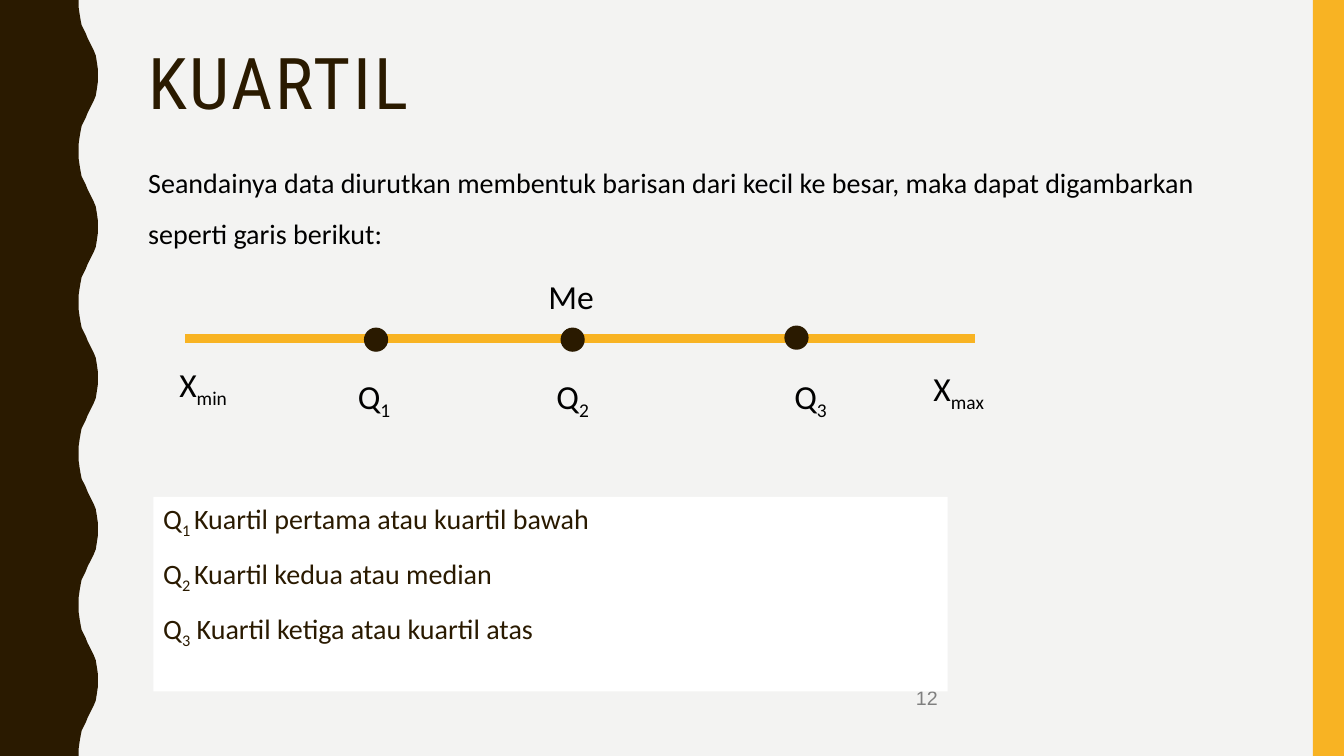
from pptx import Presentation
from pptx.dml.color import RGBColor
from pptx.enum.shapes import MSO_CONNECTOR, MSO_SHAPE
from pptx.enum.text import MSO_ANCHOR, MSO_AUTO_SIZE, PP_ALIGN
from pptx.oxml.ns import qn
from pptx.util import Emu, Pt
from lxml import etree

RECT, OVAL = MSO_SHAPE.RECTANGLE, MSO_SHAPE.OVAL
STRAIGHT = MSO_CONNECTOR.STRAIGHT
TOP, MIDDLE = MSO_ANCHOR.TOP, MSO_ANCHOR.MIDDLE
LEFT, RIGHT = PP_ALIGN.LEFT, PP_ALIGN.RIGHT
NO_FIT = MSO_AUTO_SIZE.NONE

C = {"paper": "F3F3F2", "brown": "2A1A00", "gold": "F8B323",
     "black": "000000", "grey": "7F7F7F", "white": "FFFFFF"}
SCALE = 9144  # EMU per px, 100 px to the inch
W, H = 1333, 750

# Right edge of one half wave, from trough to crest
HALF_WAVE = [(78, 0), (78, 7), (79, 14), (80, 20), (81, 25), (83, 29),
             (85, 33), (87, 38), (89, 42), (91, 46), (93, 50), (95, 55),
             (96, 61), (97, 68), (97, 75)]
WAVE = 150


def px(*values):
    return [Emu(v * SCALE) for v in values]


def rgb(name):
    return RGBColor.from_string(C[name])


def paint(s, color):
    s.shadow.inherit = False
    s.fill.solid()
    s.fill.fore_color.rgb = rgb(color)
    s.line.fill.background()


def style(r, size, color, font="Calibri"):
    r.font.size, r.font.name = Pt(size), font
    r.font.color.rgb = rgb(color)


def prepare(tf, anchor=TOP):
    tf.word_wrap, tf.auto_size = True, NO_FIT
    tf.vertical_anchor = anchor


def write(p, parts, size, color):
    """Add runs; every second part is a subscript."""
    for i, text in enumerate(parts):
        r = p.add_run()
        r.text = text
        style(r, size, color)
        if i % 2:
            r.font._element.set("baseline", "-25000")


def add_label(shapes, box, parts, size=24, color="black"):
    tf = shapes.add_textbox(*px(*box)).text_frame
    prepare(tf)
    write(tf.paragraphs[0], parts, size, color)


def add_frame(slide):
    slide.background.fill.solid()
    slide.background.fill.fore_color.rgb = rgb("paper")
    # Wavy left edge
    period = HALF_WAVE + [(x, WAVE - y) for x, y in HALF_WAVE[-2::-1]]
    edge = [(x, y + top) for top in range(0, H, WAVE) for x, y in period]
    builder = slide.shapes.build_freeform(0, 0, scale=SCALE)
    builder.add_line_segments(edge + [(0, H)], close=True)
    paint(builder.convert_to_shape(), "brown")
    # Gold right edge
    paint(slide.shapes.add_shape(RECT, *px(W - 31, 0, 31, H)), "gold")


def fill_placeholder(s, box, text, size, color, font, spacing):
    s.left, s.top, s.width, s.height = px(*box)
    tf = s.text_frame
    tf.text = text
    prepare(tf)
    p = tf.paragraphs[0]
    p.alignment, p.line_spacing = LEFT, spacing
    style(p.runs[0], size, color, font)
    return p


def add_text(slide, box):
    x, y, w, h = box
    p = fill_placeholder(slide.shapes.title, (x, y, w, 101), "KUARTIL",
                         51, "brown", "Roboto Condensed", 0.9)
    p.runs[0].font._element.set("spc", "200")
    p = fill_placeholder(
        slide.placeholders[1], (x, y + 101, w, h - 101),
        "Seandainya data diurutkan membentuk barisan dari kecil ke besar, "
        "maka dapat digambarkan seperti garis berikut:",
        20, "black", "Calibri", 1.5)
    p.space_before = Pt(7)
    pPr = p._p.get_or_add_pPr()
    pPr.set("marL", "0")
    pPr.set("indent", "0")
    etree.SubElement(pPr, qn("a:buNone"))


def add_page_number(slide, box):
    tf = slide.shapes.add_textbox(*px(*box)).text_frame
    prepare(tf, MIDDLE)
    tf.text = "12"
    p = tf.paragraphs[0]
    p.alignment = RIGHT
    style(p.runs[0], 14, "grey", "Arial")


def add_number_line(slide, box):
    x, y, w, h = box
    shapes = slide.shapes.add_group_shape().shapes
    # Axis
    axis_y = y + 67
    axis = shapes.add_connector(STRAIGHT, *px(x + 16, axis_y, x + 799, axis_y))
    axis.line.color.rgb, axis.line.width = rgb("gold"), Pt(6)
    etree.SubElement(axis._element.spPr, qn("a:effectLst"))
    # Quartile dots
    for dx, dy in ((193, 0), (388, 0), (610, -2)):
        dot = shapes.add_shape(OVAL, *px(x + dx, axis_y + dy - 11, 24, 24))
        paint(dot, "brown")
    # Labels
    for dx, dy, width, parts in (
            (0, 87, 118, ("X", "min")), (177, 99, 79, ("Q", "1")),
            (374, 99, 102, ("Q", "2")), (366, 0, 94, ("Me",)),
            (610, 99, 110, ("Q", "3")), (748, 91, 98, ("X", "max"))):
        add_label(shapes, (x + dx, y + dy, width, 50), parts)


def add_legend(slide, box):
    s = slide.shapes.add_shape(RECT, *px(*box))
    paint(s, "white")
    tf = s.text_frame
    prepare(tf)
    for i, parts in enumerate((
            ("Q", "1 ", "Kuartil pertama atau kuartil bawah"),
            ("Q", "2 ", "Kuartil kedua atau median"),
            ("Q", "3", " Kuartil ketiga atau kuartil atas"))):
        p = tf.add_paragraph() if i else tf.paragraphs[0]
        p.alignment = LEFT
        p.space_before = Pt(12 if i else 0)
        write(p, parts, 20, "brown")


def main():
    prs = Presentation()
    prs.slide_width, prs.slide_height = px(W, H)
    slide = prs.slides.add_slide(prs.slide_layouts[1])
    add_frame(slide)
    add_text(slide, (137, 42, 1113, 601))
    add_page_number(slide, (894, 672, 46, 40))
    add_number_line(slide, (168, 269, 846, 149))
    add_legend(slide, (152, 493, 788, 193))
    prs.save("out.pptx")


if __name__ == "__main__":
    main()
